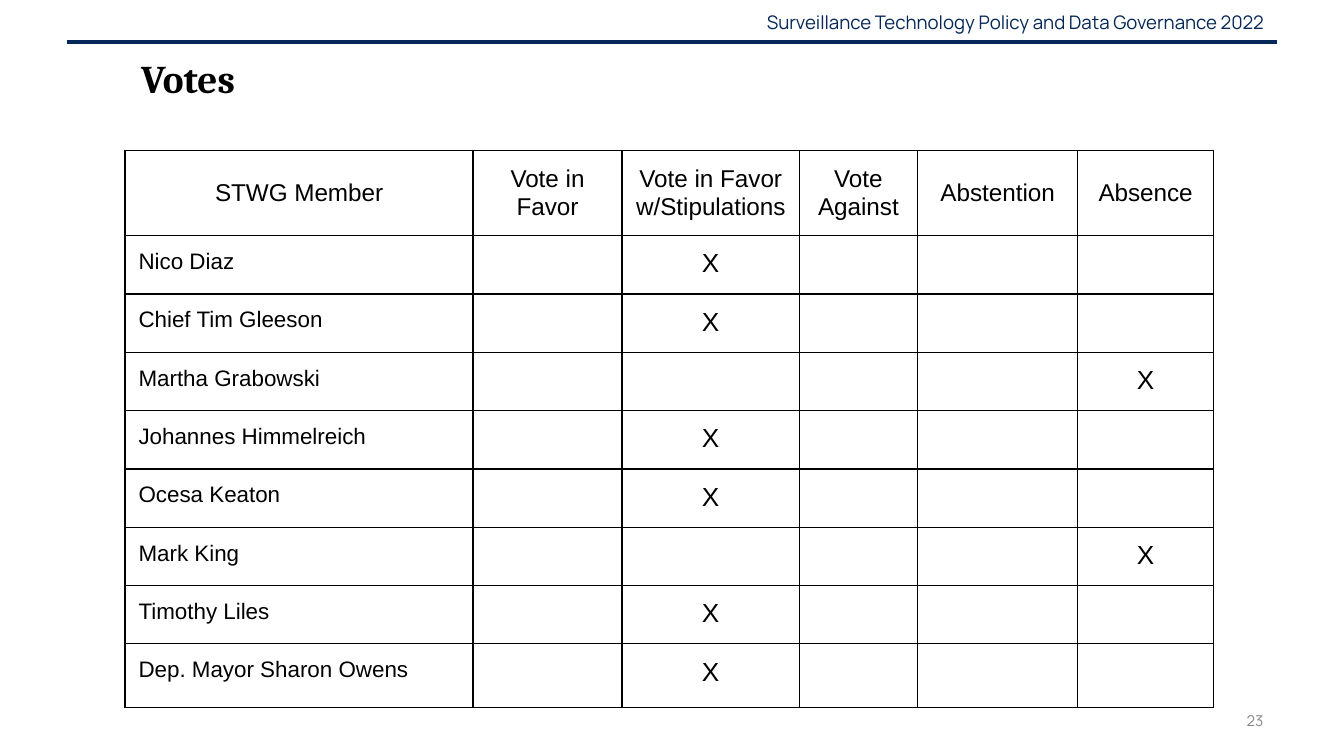
from lxml.etree import SubElement
from pptx import Presentation
from pptx.dml.color import RGBColor
from pptx.enum.shapes import MSO_CONNECTOR as Connector
from pptx.enum.text import MSO_ANCHOR as Anchor, MSO_AUTO_SIZE as AutoSize, PP_ALIGN as Align
from pptx.oxml.ns import qn
from pptx.util import Pt

NAVY = RGBColor(0x06, 0x28, 0x58)
GRAY = RGBColor(0x88, 0x88, 0x88)
BLACK = RGBColor(0, 0, 0)

HEADINGS = ["STWG Member", "Vote in Favor", "Vote in Favor w/Stipulations",
            "Vote Against", "Abstention", "Absence"]
STIPULATIONS, ABSENCE = 2, 5
VOTES = [
    ("Nico Diaz", STIPULATIONS),
    ("Chief Tim Gleeson", STIPULATIONS),
    ("Martha Grabowski", ABSENCE),
    ("Johannes Himmelreich", STIPULATIONS),
    ("Ocesa Keaton", STIPULATIONS),
    ("Mark King", ABSENCE),
    ("Timothy Liles", STIPULATIONS),
    ("Dep. Mayor Sharon Owens", STIPULATIONS),
]
COLUMN_WIDTHS = [186.4, 79.8, 95.1, 63.2, 86, 72.6]
HEADER_HEIGHT, ROW_HEIGHT, LAST_HEIGHT = 43.4, 30.15, 34
CELL_MARGIN = 7.2
BORDER_WIDTH = 0.75


def style_paragraph(para, name, size, color, align, bold=False):
    para.alignment = align
    font = para.font
    font.name, font.size, font.bold = name, Pt(size), bold
    font.color.rgb = color


def add_title(page, text):
    title = page.shapes.title
    title.left, title.top, title.width, title.height = Pt(68.4), Pt(21.6), Pt(103.7), Pt(63.4)
    frame = title.text_frame
    frame.text = text
    frame.word_wrap = True
    frame.auto_size = AutoSize.NONE
    frame.vertical_anchor = Anchor.TOP
    para = frame.paragraphs[0]
    style_paragraph(para, "Cambria", 21, BLACK, Align.LEFT, bold=True)
    para.line_spacing = 1.15
    para.space_before = Pt(12)


def add_label(page, text, left, top, width, size, color):
    box = page.shapes.add_textbox(Pt(left), Pt(top), Pt(width), Pt(21.6))
    frame = box.text_frame
    frame.word_wrap = True
    frame.vertical_anchor = Anchor.MIDDLE
    frame.text = text
    style_paragraph(frame.paragraphs[0], "Manrope", size, color, Align.RIGHT)


def add_rule(page, left, right, y):
    rule = page.shapes.add_connector(Connector.STRAIGHT, Pt(left), Pt(y), Pt(right), Pt(y))
    rule.line.color.rgb = NAVY
    rule.line.width = Pt(2.25)
    SubElement(rule._element.spPr, qn("a:effectLst"))


def add_borders(cell):
    properties = cell._tc.get_or_add_tcPr()
    for side in ("lnL", "lnR", "lnT", "lnB"):
        line = SubElement(properties, qn(f"a:{side}"), w=str(Pt(BORDER_WIDTH)))
        fill = SubElement(line, qn("a:solidFill"))
        SubElement(fill, qn("a:srgbClr"), val=str(BLACK))


def fill_cell(cell, text, size, align, anchor=Anchor.TOP):
    cell.text = text
    cell.vertical_anchor = anchor
    cell.margin_left = cell.margin_right = Pt(CELL_MARGIN)
    # Empty cells need no vertical margin, so they never stretch a row
    cell.margin_top = cell.margin_bottom = Pt(CELL_MARGIN if text else 0)
    style_paragraph(cell.text_frame.paragraphs[0], "Arial", size, BLACK, align)
    add_borders(cell)
    cell.fill.background()


def add_vote_table(page, left, top):
    heights = [HEADER_HEIGHT] + [ROW_HEIGHT] * (len(VOTES) - 1) + [LAST_HEIGHT]
    frame = page.shapes.add_table(len(heights), len(HEADINGS), Pt(left), Pt(top),
                                  Pt(sum(COLUMN_WIDTHS)), Pt(sum(heights)))
    table = frame.table
    table.first_row = table.horz_banding = False
    for column, width in zip(table.columns, COLUMN_WIDTHS):
        column.width = Pt(width)
    for row, height in zip(table.rows, heights):
        row.height = Pt(height)

    # Heading row
    for index, heading in enumerate(HEADINGS):
        fill_cell(table.cell(0, index), heading, 13, Align.CENTER, Anchor.MIDDLE)

    # One row per member, with a mark under the vote cast
    for row, (member, vote) in enumerate(VOTES, start=1):
        fill_cell(table.cell(row, 0), member, 12, Align.LEFT)
        for column in range(1, len(HEADINGS)):
            mark = "X" if column == vote else ""
            fill_cell(table.cell(row, column), mark, 14, Align.CENTER)


def main():
    deck = Presentation()
    deck.slide_width, deck.slide_height = Pt(720), Pt(405)
    page = deck.slides.add_slide(deck.slide_layouts[5])

    # Running header and page number
    add_label(page, "Surveillance Technology Policy and Data Governance 2022",
              375.1, 0.9, 308.9, 10, NAVY)
    add_label(page, "23", 516.2, 375.1, 167.8, 8, GRAY)
    add_rule(page, 36, 684, 22.5)

    # Content
    add_title(page, "Votes")
    add_vote_table(page, 67, 80.6)
    deck.save("out.pptx")


if __name__ == "__main__":
    main()
